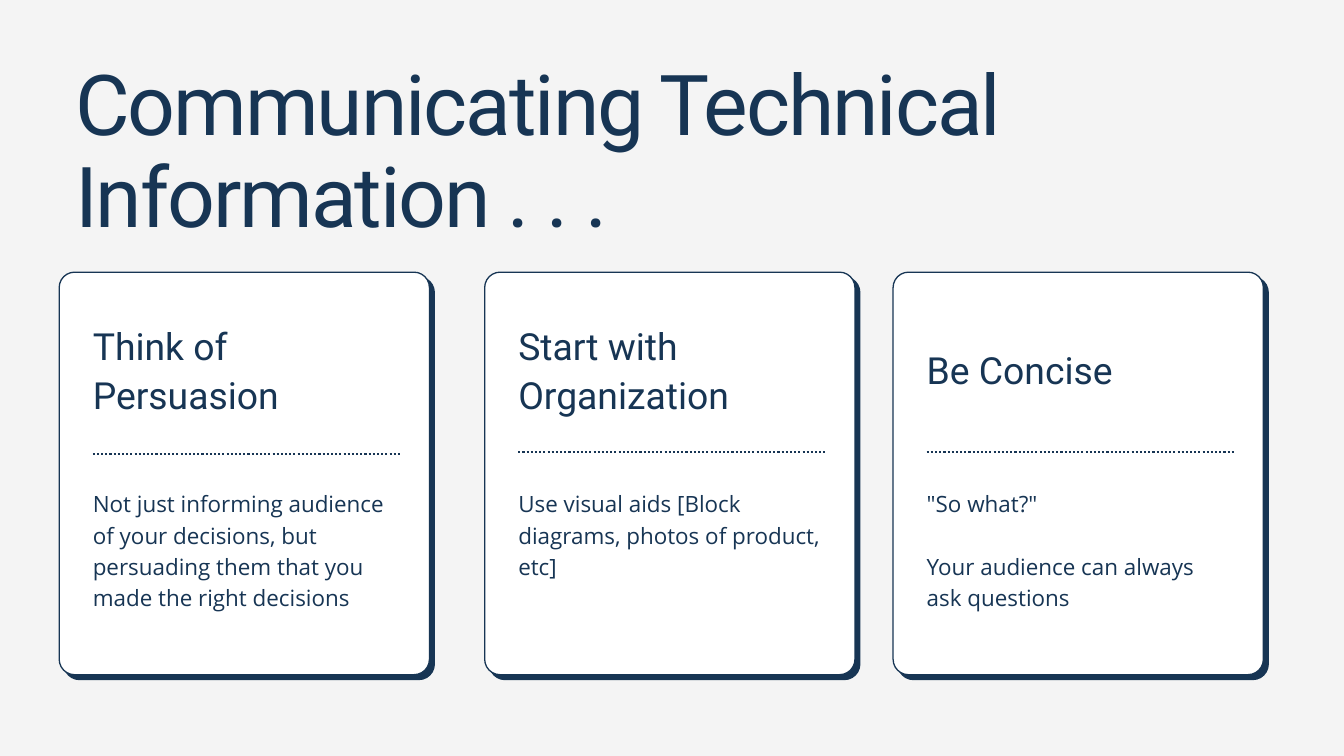
from dataclasses import dataclass

from lxml import etree
from pptx import Presentation
from pptx.dml.color import RGBColor
from pptx.enum.dml import MSO_LINE
from pptx.enum.shapes import MSO_CONNECTOR, MSO_SHAPE
from pptx.enum.text import MSO_ANCHOR, MSO_AUTO_SIZE, PP_ALIGN
from pptx.oxml.ns import qn
from pptx.util import Pt

ROUNDED = MSO_SHAPE.ROUNDED_RECTANGLE
STRAIGHT = MSO_CONNECTOR.STRAIGHT
DOTTED = MSO_LINE.ROUND_DOT
TOP = MSO_ANCHOR.TOP
LEFT = PP_ALIGN.LEFT
NO_AUTOFIT = MSO_AUTO_SIZE.NONE
TITLE_ONLY = 5


@dataclass(frozen=True)
class Theme:
    navy = RGBColor(0x17, 0x35, 0x54)
    white = RGBColor(0xFF, 0xFF, 0xFF)
    background = RGBColor(0xF4, 0xF4, 0xF4)
    heading_font = "Roboto"
    body_font = "Open Sans"
    title_size = 90
    heading_size = 40
    body_size = 24


THEME = Theme()

CARD_TOP, CARD_WIDTH, CARD_HEIGHT = 291.6, 396.7, 431.3
CARD_RADIUS = 16.5
SHADOW_OFFSET = 5.2
PADDING = 36
CONTENT_WIDTH = 329.2
HEADING_MIDDLE, HEADING_LINE = 393.5, 52
BODY_TOP, BODY_LINE = 520.6, 33.6

CARDS = [
    (63.4, 486.7, "Think of Persuasion", 2,
     ["Not just informing audience of your decisions, but persuading them "
      "that you made the right decisions"], 4),
    (519.3, 484.6, "Start with Organization", 2,
     ["Use visual aids [Block diagrams, photos of product, etc]"], 3),
    (956.9, 484.6, "Be Concise", 1,
     ['"So what?"', "Your audience can always ask questions"], 4),
]


def write_text(shape, paragraphs, *, font, size, line, gap=0, tracking=0):
    frame = shape.text_frame
    frame.word_wrap = True
    frame.auto_size = NO_AUTOFIT
    frame.vertical_anchor = TOP
    frame.margin_left = frame.margin_right = Pt(0)
    frame.margin_top = frame.margin_bottom = Pt(0)
    for index, text in enumerate(paragraphs):
        paragraph = frame.add_paragraph() if index else frame.paragraphs[0]
        paragraph.alignment = LEFT
        paragraph.line_spacing = Pt(line)
        paragraph.space_before = Pt(gap if index else 0)
        run = paragraph.add_run()
        run.text = text
        run.font.name = font
        run.font.size = Pt(size)
        run.font.color.rgb = THEME.navy
        if tracking:
            run.font._element.set("spc", str(round(tracking * 100)))


def add_title(slide, text):
    title = slide.shapes.title
    title.left, title.top = Pt(80.6), Pt(64.1)
    title.width, title.height = Pt(1278), Pt(200)
    write_text(title, [text], font=THEME.heading_font,
               size=THEME.title_size, line=99, tracking=-2.2)


def add_text(slide, left, top, height, paragraphs, **text_format):
    box = slide.shapes.add_textbox(Pt(left), Pt(top), Pt(CONTENT_WIDTH), Pt(height))
    write_text(box, paragraphs, **text_format)


def add_panel(slide, left, top, fill):
    panel = slide.shapes.add_shape(
        ROUNDED, Pt(left), Pt(top), Pt(CARD_WIDTH), Pt(CARD_HEIGHT))
    panel.adjustments[0] = CARD_RADIUS / CARD_WIDTH
    panel.shadow.inherit = False
    panel.fill.solid()
    panel.fill.fore_color.rgb = fill
    panel.line.color.rgb = THEME.navy
    panel.line.width = Pt(1.4)


def add_divider(slide, left, top):
    divider = slide.shapes.add_connector(
        STRAIGHT, Pt(left), Pt(top), Pt(left + CONTENT_WIDTH), Pt(top))
    divider.line.color.rgb = THEME.navy
    divider.line.width = Pt(2.25)
    divider.line.dash_style = DOTTED
    etree.SubElement(divider._element.spPr, qn("a:effectLst"))


def add_card(slide, left, divider_top, heading, heading_lines, body, body_lines):
    add_panel(slide, left + SHADOW_OFFSET, CARD_TOP + SHADOW_OFFSET, THEME.navy)
    add_panel(slide, left, CARD_TOP, THEME.white)
    content_left = left + PADDING
    heading_height = heading_lines * HEADING_LINE - 2
    add_text(slide, content_left, HEADING_MIDDLE - heading_height / 2,
             heading_height, [heading], font=THEME.heading_font,
             size=THEME.heading_size, line=HEADING_LINE)
    add_divider(slide, content_left, divider_top)
    add_text(slide, content_left, BODY_TOP, body_lines * BODY_LINE - 4, body,
             font=THEME.body_font, size=THEME.body_size,
             line=BODY_LINE, gap=BODY_LINE)


def main():
    presentation = Presentation()
    presentation.slide_width, presentation.slide_height = Pt(1440), Pt(810)
    slide = presentation.slides.add_slide(presentation.slide_layouts[TITLE_ONLY])
    slide.background.fill.solid()
    slide.background.fill.fore_color.rgb = THEME.background
    add_title(slide, "Communicating Technical Information . . .")
    for card in CARDS:
        add_card(slide, *card)
    presentation.save("out.pptx")


if __name__ == "__main__":
    main()
